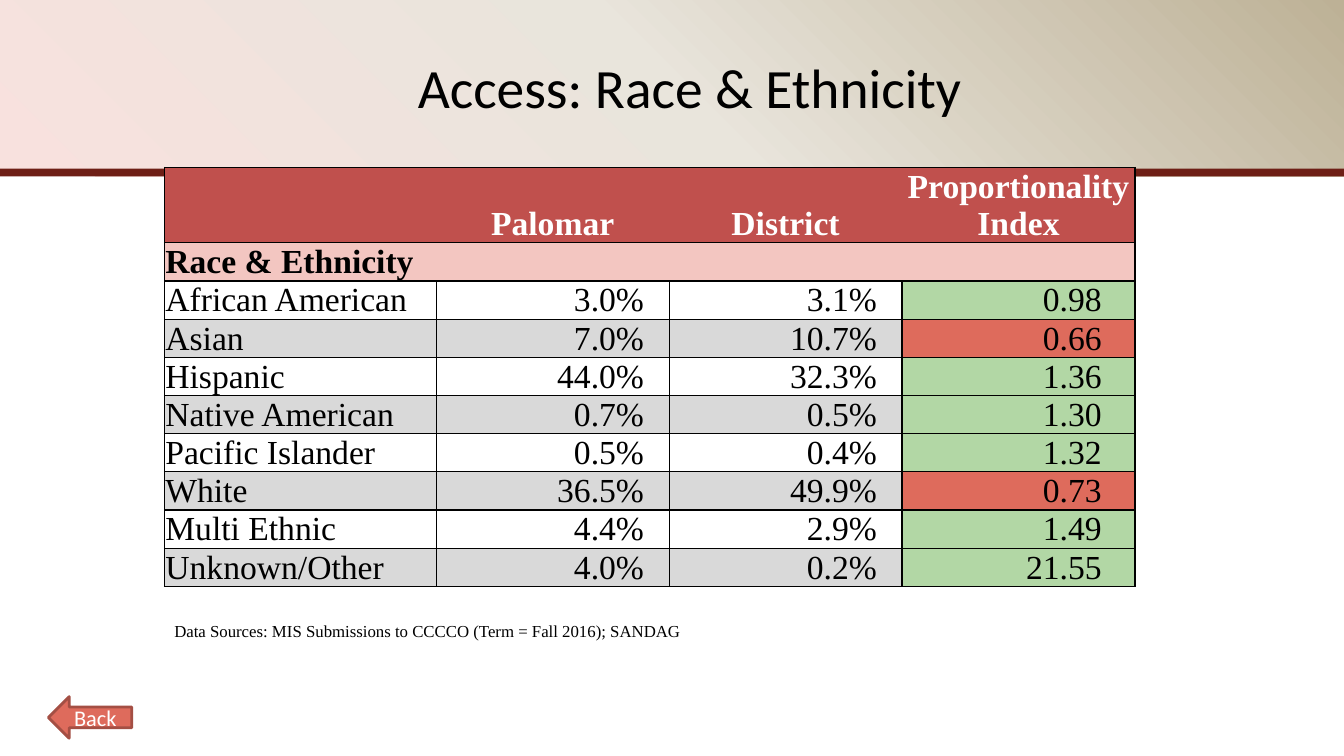
from lxml import etree
from pptx import Presentation
from pptx.dml.color import RGBColor
from pptx.enum.shapes import MSO_SHAPE
from pptx.enum.text import MSO_ANCHOR, PP_ALIGN
from pptx.oxml import parse_xml
from pptx.oxml.ns import nsdecls, qn
from pptx.util import Inches, Pt

RECT, ARROW = MSO_SHAPE.RECTANGLE, MSO_SHAPE.LEFT_ARROW
LEFT, MID, RIGHT = PP_ALIGN.LEFT, PP_ALIGN.CENTER, PP_ALIGN.RIGHT
CENTER, BOTTOM, TOP = MSO_ANCHOR.MIDDLE, MSO_ANCHOR.BOTTOM, MSO_ANCHOR.TOP

BLACK = RGBColor(0x00, 0x00, 0x00)
WHITE = RGBColor(0xFF, 0xFF, 0xFF)
GREY = RGBColor(0xD9, 0xD9, 0xD9)
MAROON = RGBColor(0x6E, 0x1F, 0x16)
BRICK = RGBColor(0xC0, 0x50, 0x4D)
PINK = RGBColor(0xF3, 0xC6, 0xC1)
GREEN = RGBColor(0xB2, 0xD7, 0xA5)
CORAL = RGBColor(0xDE, 0x6B, 0x5C)
RUST = RGBColor(0xA4, 0x4F, 0x44)
TAN = RGBColor(0xBD, 0xB1, 0x96)
SAND = RGBColor(0xE9, 0xE5, 0xDC)
BLUSH = RGBColor(0xF8, 0xE1, 0xDE)

SANS, SERIF = "Calibri", "Times New Roman"
EDGE = 12.23
COLS = (20.23, 17.33, 17.33, 17.33)
ROW = 4.93
PADS = (0.01, 0.25, 0.25, 0.33)
PARITY = 0.8

HEAD = ("", "Palomar", "District", "Proportionality Index")
GROUP = ("Race & Ethnicity", "", "", "")
DATA = (
    ("African American", 3.0, 3.1, 0.98),
    ("Asian", 7.0, 10.7, 0.66),
    ("Hispanic", 44.0, 32.3, 1.36),
    ("Native American", 0.7, 0.5, 1.30),
    ("Pacific Islander", 0.5, 0.4, 1.32),
    ("White", 36.5, 49.9, 0.73),
    ("Multi Ethnic", 4.4, 2.9, 1.49),
    ("Unknown/Other", 4.0, 0.2, 21.55),
)


class Deck:
    """Draws styled elements on one slide, with lengths in percent of its size."""

    def __init__(self):
        self.file = Presentation()
        self.file.slide_width = Inches(13.33)
        self.file.slide_height = Inches(7.5)
        self.slide = self.file.slides.add_slide(self.file.slide_layouts[6])

    def wide(self, share):
        return round(self.file.slide_width * share / 100)

    def high(self, share):
        return round(self.file.slide_height * share / 100)

    def box(self, x, y, w, h):
        return self.wide(x), self.high(y), self.wide(w), self.high(h)

    def words(self, frame, text, size, font, color, align, bold=False):
        para = frame.paragraphs[0]
        para.text = text
        para.alignment = align
        para.font.size = Pt(size)
        para.font.name = font
        para.font.bold = bold
        para.font.color.rgb = color

    def shape(self, kind, area, fill, line=None):
        item = self.slide.shapes.add_shape(kind, *self.box(*area))
        item.shadow.inherit = False
        item.fill.solid()
        item.fill.fore_color.rgb = fill
        if line is None:
            item.line.fill.background()
        else:
            item.line.color.rgb = line
            item.line.width = Pt(2)
        return item

    def glow(self, area, colors):
        item = self.shape(RECT, area, colors[0])
        step = 100000 // (len(colors) - 1)
        stops = "".join(
            f'<a:gs pos="{n * step}"><a:srgbClr val="{color}"/></a:gs>'
            for n, color in enumerate(colors)
        )
        fill = parse_xml(
            f'<a:gradFill {nsdecls("a")} rotWithShape="1"><a:gsLst>{stops}</a:gsLst>'
            '<a:path path="circle"><a:fillToRect l="100000" b="100000"/></a:path>'
            "</a:gradFill>"
        )
        props = item.element.spPr
        props.replace(props.find(qn("a:solidFill")), fill)

    def label(self, area, text, size, font, align, anchor):
        frame = self.slide.shapes.add_textbox(*self.box(*area)).text_frame
        frame.word_wrap = True
        frame.vertical_anchor = anchor
        self.words(frame, text, size, font, BLACK, align)

    def button(self, area, text):
        item = self.shape(ARROW, area, CORAL, RUST)
        item.text_frame.vertical_anchor = CENTER
        self.words(item.text_frame, text, 16, SANS, WHITE, MID)

    def rule(self, cell, edges):
        props = cell._tc.get_or_add_tcPr()
        for n, side in enumerate("LRTB"):
            line = etree.Element(qn(f"a:ln{side}"), w=str(Pt(1)))
            if side in edges:
                fill = etree.SubElement(line, qn("a:solidFill"))
                etree.SubElement(fill, qn("a:srgbClr"), val=str(BLACK))
            else:
                etree.SubElement(line, qn("a:noFill"))
            props.insert(n, line)

    def cell(self, cell, text, fill, color, align, pad, bold, edges):
        cell.margin_left = cell.margin_top = Inches(0.01)
        cell.margin_right = Inches(pad)
        cell.margin_bottom = 0
        cell.vertical_anchor = BOTTOM
        cell.fill.solid()
        cell.fill.fore_color.rgb = fill
        self.words(cell.text_frame, text, 24, SERIF, color, align, bold)
        self.rule(cell, edges)

    def table(self, x, y):
        count = len(DATA) + 2
        area = self.box(x, y, sum(COLS), ROW * (count + 1))
        grid = self.slide.shapes.add_table(count, len(COLS), *area).table
        for col, width in zip(grid.columns, COLS):
            col.width = self.wide(width)
        for n, row in enumerate(grid.rows):
            row.height = self.high(ROW if n else 2 * ROW)
        last = len(COLS) - 1
        for c, text in enumerate(HEAD):
            edges = "TB" + "L" * (c == 0) + "R" * (c == last)
            self.cell(grid.cell(0, c), text, BRICK, WHITE, MID, 0.01, True, edges)
        for c, text in enumerate(GROUP):
            self.cell(grid.cell(1, c), text, PINK, BLACK, LEFT, 0.01, True, "LRTB")
        grid.cell(1, 0).merge(grid.cell(1, last))
        for r, (name, local, total, index) in enumerate(DATA):
            texts = (name, f"{local:.1f}%", f"{total:.1f}%", f"{index:.2f}")
            band = GREY if r % 2 else WHITE
            mark = GREEN if index >= PARITY else CORAL
            for c, text in enumerate(texts):
                fill = mark if c == last else band
                align = RIGHT if c else LEFT
                self.cell(grid.cell(r + 2, c), text, fill, BLACK, align,
                          PADS[c], False, "LRTB")


def main():
    deck = Deck()
    deck.glow((0, 0, 100, 23.33), (TAN, SAND, BLUSH))
    deck.shape(RECT, (0, 22.3, 100, 1.05), MAROON)
    deck.table(EDGE, 22.15)
    deck.label((4.55, 9.47, 93.54, 4), "Access: Race & Ethnicity", 39.6, SANS, MID, CENTER)
    deck.button((3.6, 92.15, 6.2, 5.5), "Back")
    deck.label((EDGE, 81.45, sum(COLS), 4),
               "Data Sources: MIS Submissions to CCCCO (Term = Fall 2016); SANDAG",
               12, SERIF, LEFT, TOP)
    deck.file.save("out.pptx")


if __name__ == "__main__":
    main()
